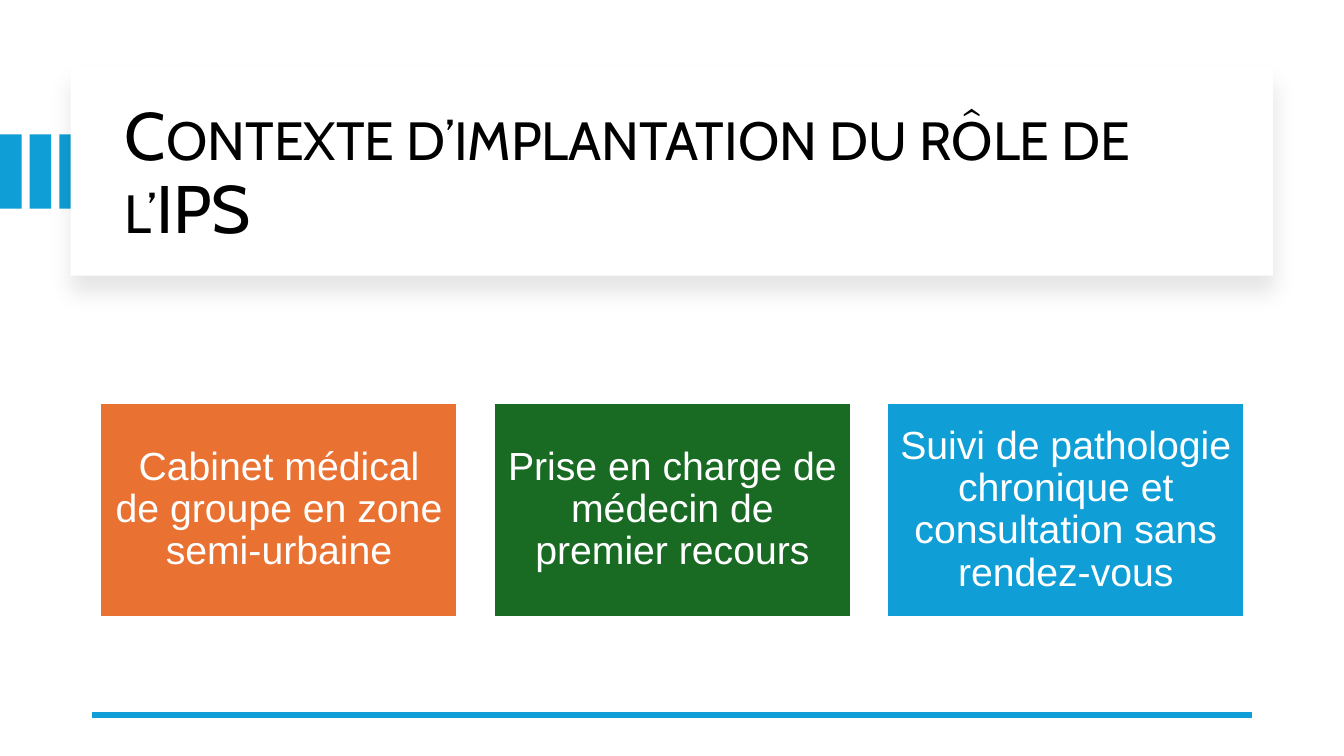
import pptx
import pptx.util
import pptx.dml.color
import pptx.enum.shapes
import pptx.enum.text
import pptx.oxml
import pptx.oxml.ns
import lxml.etree

Pt = pptx.util.Pt
RGB = pptx.dml.color.RGBColor.from_string
SHAPE = pptx.enum.shapes.MSO_SHAPE
MIDDLE = pptx.enum.text.MSO_ANCHOR.MIDDLE
HUES = {"blue": "0F9ED5", "orange": "E97132", "green": "196B24",
        "white": "FFFFFF", "black": "000000"}


def add_box(left, top, width, height, hue):
    box = slide.shapes.add_shape(
        SHAPE.RECTANGLE, Pt(left), Pt(top), Pt(width), Pt(height))
    box.shadow.inherit = False
    box.fill.solid()
    box.fill.fore_color.rgb = RGB(HUES[hue])
    box.line.fill.background()
    return box


deck = pptx.Presentation()
deck.slide_width, deck.slide_height = Pt(960), Pt(540)
slide = deck.slides.add_slide(deck.slide_layouts[5])

# Side stripes, partly under the title panel
for i in range(3):
    add_box(i * 21.2, 96, 15.4, 53, "blue")

# Title panel with a soft shadow below
panel = add_box(50.5, 48, 859, 149, "white")
glow = panel._element.spPr.find(pptx.oxml.ns.qn("a:effectLst"))
glow.append(pptx.oxml.parse_xml(
    '<a:outerShdw xmlns:a="http://schemas.openxmlformats.org/drawingml/2006/main"'
    f' blurRad="{Pt(15)}" dist="{Pt(11)}" dir="5400000" algn="t" rotWithShape="0">'
    f'<a:srgbClr val="{HUES["black"]}"><a:alpha val="10000"/></a:srgbClr>'
    '</a:outerShdw>'))

# Title, brought in front of the panel
title = slide.shapes.title
title.left, title.top, title.width, title.height = Pt(82), Pt(64), Pt(801), Pt(122.5)
slide.shapes._spTree.append(title._element)
frame = title.text_frame
frame.text = "Contexte d’implantation du rôle de l’IPS"
frame.word_wrap = True
frame.auto_size = pptx.enum.text.MSO_AUTO_SIZE.NONE
frame.vertical_anchor = MIDDLE
para = frame.paragraphs[0]
para.alignment = pptx.enum.text.PP_ALIGN.LEFT
para.line_spacing = 0.9
para.font.name, para.font.size = "Cabin", Pt(48)
para.font.color.rgb = RGB(HUES["black"])
para.runs[0]._r.get_or_add_rPr().set("cap", "small")

# Bottom rule
rule = slide.shapes.add_connector(
    pptx.enum.shapes.MSO_CONNECTOR.STRAIGHT, Pt(894), Pt(510.5), Pt(66), Pt(510.5))
rule.line.color.rgb = RGB(HUES["blue"])
rule.line.width = Pt(4.5)
lxml.etree.SubElement(rule._element.spPr, pptx.oxml.ns.qn("a:effectLst"))

# Three context cards
cards = [
    ("orange", "Cabinet médical de groupe en zone semi-urbaine"),
    ("green", "Prise en charge de médecin de premier recours"),
    ("blue", "Suivi de pathologie chronique et consultation sans rendez-vous"),
]
for i, (hue, text) in enumerate(cards):
    card = add_box(71.5 + i * 281, 287.5, 255.5, 153.5, hue)
    card.line.color.rgb = RGB(HUES["white"])
    card.line.width = Pt(2)
    frame = card.text_frame
    frame.text = text
    frame.word_wrap = True
    frame.vertical_anchor = MIDDLE
    frame.margin_left = frame.margin_right = Pt(8.4)
    frame.margin_top = frame.margin_bottom = Pt(8.4)
    para = frame.paragraphs[0]
    para.alignment = pptx.enum.text.PP_ALIGN.CENTER
    para.line_spacing = 0.9
    para.font.name, para.font.size = "Arial", Pt(28)
    para.font.color.rgb = RGB(HUES["white"])

deck.save("out.pptx")
